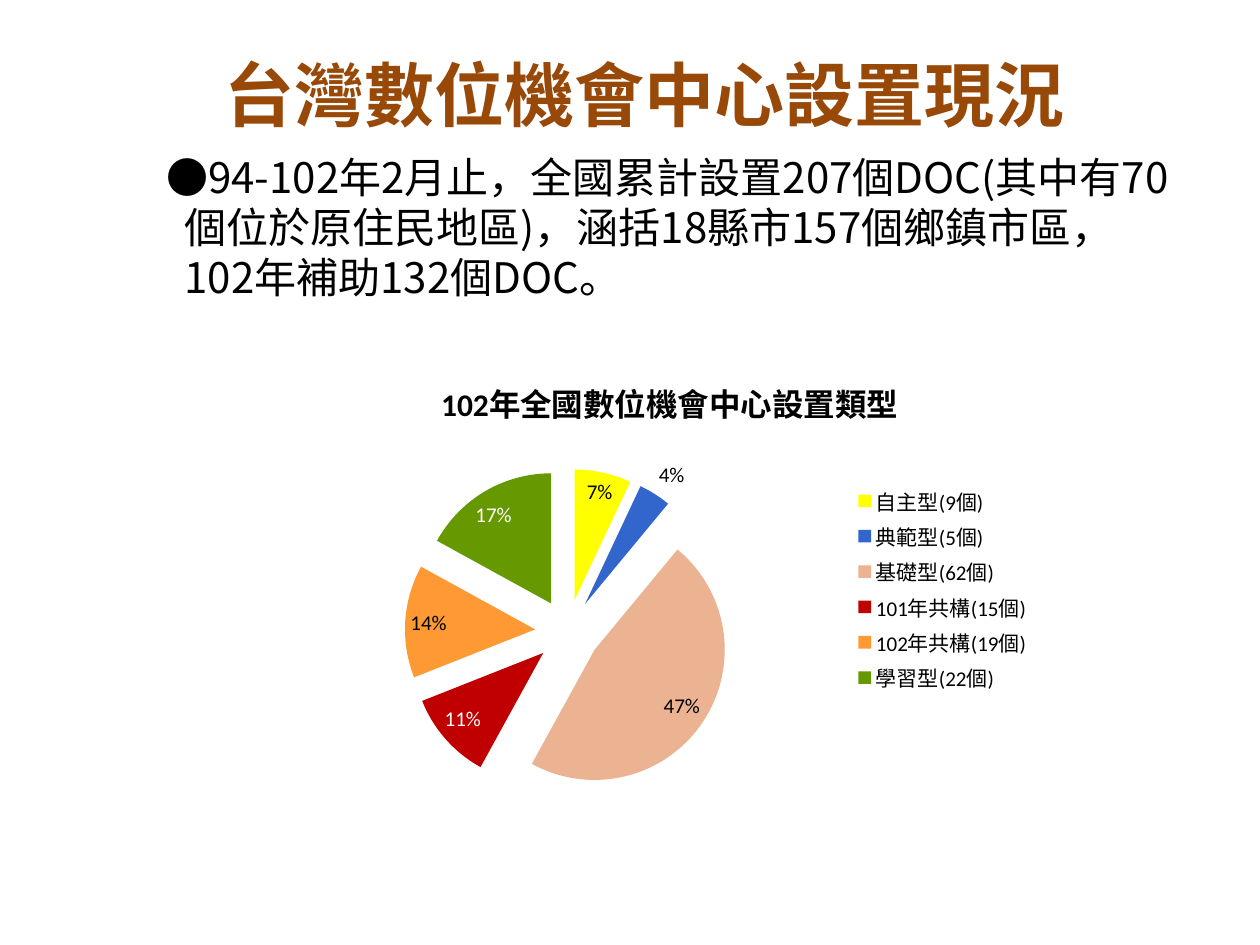
from lxml import etree
from pptx import Presentation
from pptx.chart.data import CategoryChartData
from pptx.dml.color import RGBColor
from pptx.enum.chart import XL_CHART_TYPE as CT, XL_LABEL_POSITION as LP, XL_LEGEND_POSITION as LG
from pptx.enum.text import MSO_ANCHOR, PP_ALIGN
from pptx.oxml.ns import qn
from pptx.util import Pt

COLORS = {"title": "984807", "text": "000000", "light": "FFFFFF"}
CJK, LATIN = "Noto Sans CJK SC", "Calibri"
TYPES = [
    ("自主型(9個)", 7, "FFFF00", "text"),
    ("典範型(5個)", 4, "3366CC", "text"),
    ("基礎型(62個)", 47, "EBB391", "text"),
    ("101年共構(15個)", 11, "C00000", "light"),
    ("102年共構(19個)", 14, "FF9933", "text"),
    ("學習型(22個)", 17, "669900", "light"),
]


def style_font(font, color="text", **values):
    """Apply format values, a colour and the East Asian typeface to a font."""
    for name, value in values.items():
        setattr(font, name, value)
    font.color.rgb = RGBColor.from_string(COLORS[color])
    ea = etree.Element(qn("a:ea"), typeface=CJK)
    font._element.find(qn("a:latin")).addnext(ea)


def add_text(slide, box, lines, spacing, align=PP_ALIGN.LEFT, **values):
    """Add a wrapped text box from (indent, text) lines."""
    tf = slide.shapes.add_textbox(*map(Pt, box)).text_frame
    tf.word_wrap = True
    tf.vertical_anchor = MSO_ANCHOR.TOP
    for i, (indent, text) in enumerate(lines):
        p = tf.add_paragraph() if i else tf.paragraphs[0]
        p.alignment, p.line_spacing = align, Pt(spacing)
        if indent:
            p._p.get_or_add_pPr().set("marL", str(Pt(indent)))
        r = p.add_run()
        r.text = text
        style_font(r.font, name=CJK, **values)


def set_layout(element, after, inner=False, **fractions):
    """Place a chart part by fractions of the chart area."""
    for old in element.findall(qn("c:layout")):
        element.remove(old)
    layout = etree.Element(qn("c:layout"))
    manual = etree.SubElement(layout, qn("c:manualLayout"))
    values = {"xMode": "edge", "yMode": "edge", **fractions}
    if inner:
        values = {"layoutTarget": "inner", **values}
    for name, value in values.items():
        etree.SubElement(manual, qn(f"c:{name}"), val=str(value))
    if after is None:
        element.insert(0, layout)
    else:
        after.addnext(layout)


def style_slices(series):
    """Colour and pull apart the slices and show their percentages."""
    labels = series.data_labels
    labels.show_percentage, labels.show_value = True, False
    labels.number_format, labels.number_format_is_linked = "0%", False
    labels.position = LP.BEST_FIT
    style_font(labels.font, name=LATIN, size=Pt(12))
    for i, (_, _, fill, label_color) in enumerate(TYPES):
        point = series.points[i]
        point.format.fill.solid()
        point.format.fill.fore_color.rgb = RGBColor.from_string(fill)
        label = point.data_label
        style_font(label.font, label_color, name=LATIN, size=Pt(12))
        label.position = LP.BEST_FIT
        dLbl = label._dLbl
        dLbl.find(qn("c:showVal")).set("val", "0")
        dLbl.find(qn("c:showPercent")).set("val", "1")
    explosion = etree.Element(qn("c:explosion"), val="25")
    series._element.find(qn("c:dPt")).addprevious(explosion)


def add_pie(slide, box, title):
    """Add the exploded pie chart with its title and legend."""
    data = CategoryChartData()
    data.categories = [name for name, *_ in TYPES]
    data.add_series("Series 1", [value for _, value, *_ in TYPES])
    chart = slide.shapes.add_chart(CT.PIE, *map(Pt, box), data).chart
    style_font(chart.font, name=LATIN, size=Pt(10))
    chart.has_title = True
    p = chart.chart_title.text_frame.paragraphs[0]
    r = p.add_run()
    r.text = title
    style_font(r.font, name=LATIN, size=Pt(18), bold=True)
    chart.has_legend = True
    legend = chart.legend
    legend.position, legend.include_in_layout = LG.RIGHT, False
    style_font(legend.font, name=LATIN, size=Pt(12))
    position = legend._element.find(qn("c:legendPos"))
    set_layout(legend._element, position, x=0.72, y=0.27, w=0.28, h=0.46)
    plot = chart.plots[0]
    plot.vary_by_categories = True
    style_slices(plot.series[0])
    area = plot._element.getparent()
    set_layout(area, None, inner=True, x=0.15, y=0.24, w=0.43, h=0.7)


def main():
    """Build the slide and save it."""
    prs = Presentation()
    prs.slide_width, prs.slide_height = Pt(720), Pt(540)
    s = prs.slides.add_slide(prs.slide_layouts[6])
    add_text(s, (82, 26, 572.5, 55.5), [(0, "台灣數位機會中心設置現況")], 48,
             PP_ALIGN.CENTER, color="title", size=Pt(40), bold=True)
    lines = [
        (0, "●94-102年2月止，全國累計設置207個DOC(其中有70"),
        (10.5, "個位於原住民地區)，涵括18縣市157個鄉鎮市區，"),
        (10.5, "102年補助132個DOC。"),
    ]
    add_text(s, (88, 83, 589.5, 94.5), lines, 28.6, size=Pt(24))
    add_pie(s, (166.5, 202.5, 432.5, 268.5), "102年全國數位機會中心設置類型")
    prs.save("out.pptx")


if __name__ == "__main__":
    main()
